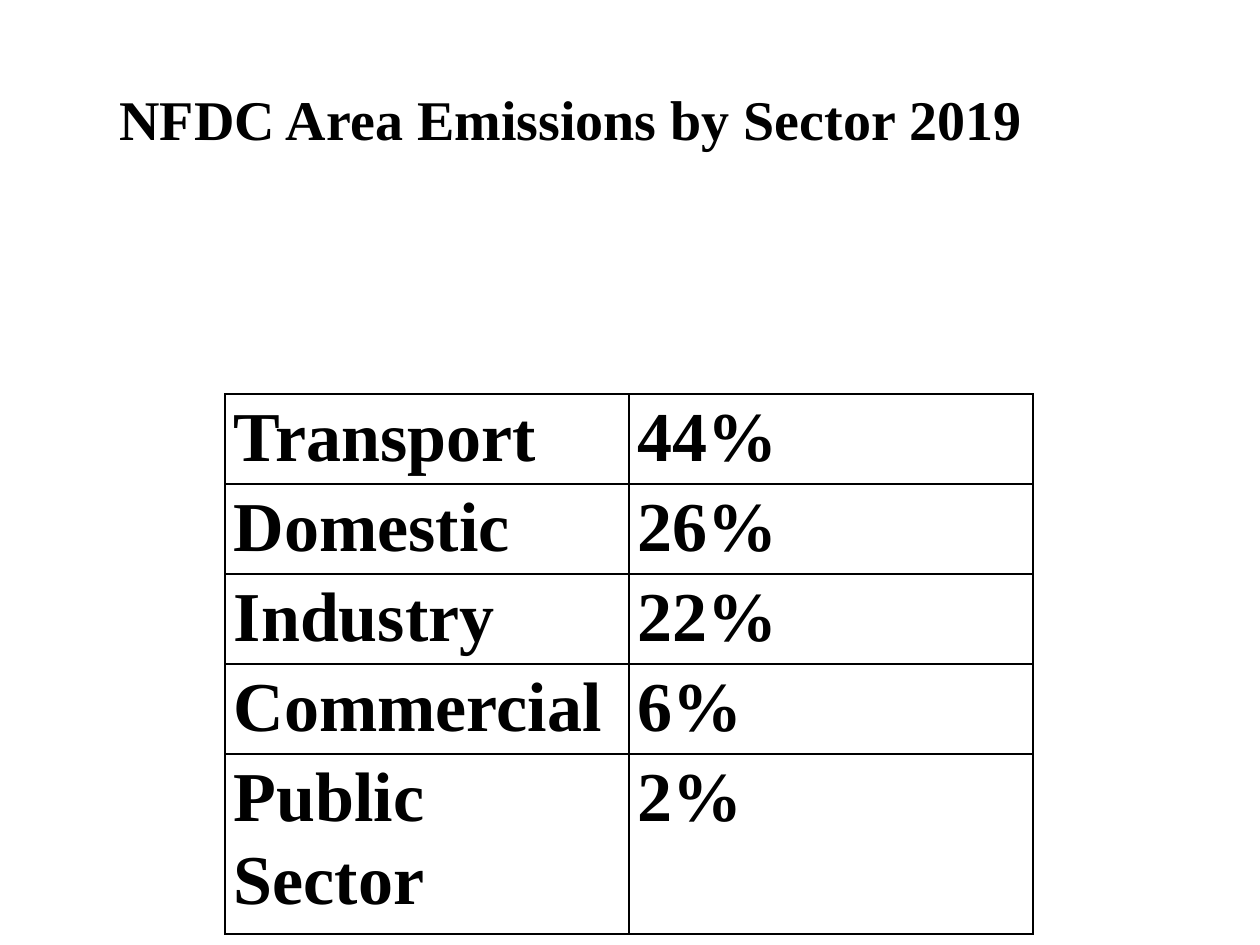
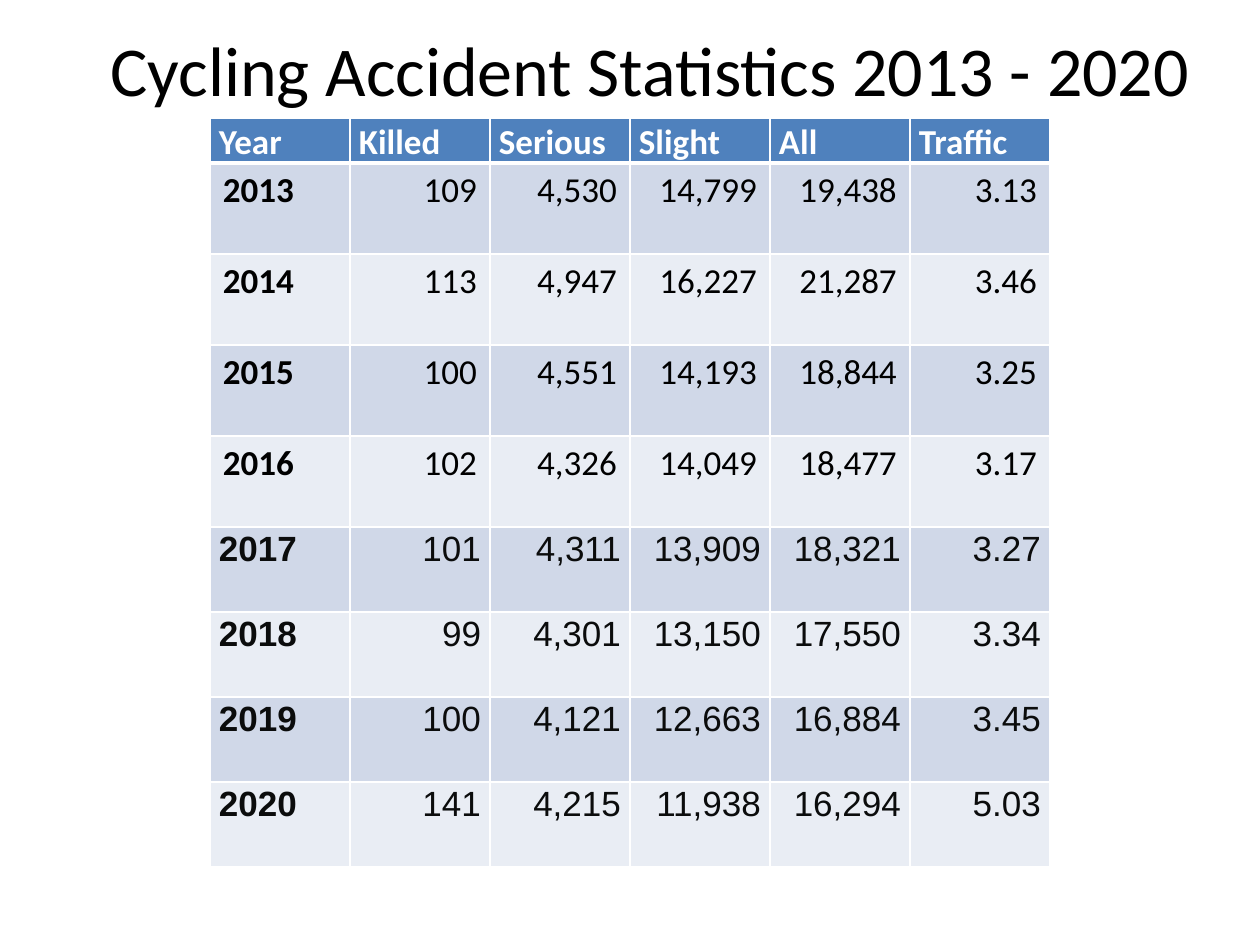
from dataclasses import dataclass

from lxml import etree
from pptx import Presentation
from pptx import util as u
from pptx.dml.color import RGBColor
from pptx.enum import text
from pptx.oxml import ns

PX = u.Inches(1) / 126
TITLE_ONLY = 5

BLACK = RGBColor(0x00, 0x00, 0x00)
INK = RGBColor(0x0B, 0x0C, 0x0C)
WHITE = RGBColor(0xFF, 0xFF, 0xFF)
HEADER_BLUE = RGBColor(0x4F, 0x81, 0xBD)
BANDS = (RGBColor(0xD0, 0xD8, 0xE8), RGBColor(0xE9, 0xED, 0xF4))

LEFT, RIGHT, CENTER = text.PP_ALIGN.LEFT, text.PP_ALIGN.RIGHT, text.PP_ALIGN.CENTER
TOP, MIDDLE = text.MSO_ANCHOR.TOP, text.MSO_ANCHOR.MIDDLE

SECTORS = [
    ("Transport", "44%"),
    ("Domestic", "26%"),
    ("Industry", "22%"),
    ("Commercial", "6%"),
    ("Public Sector", "2%"),
]
ACCIDENT_HEADER = ("Year", "Killed", "Serious", "Slight", "All", "Traffic")
ACCIDENTS = [
    ("2013", "109", "4,530", "14,799", "19,438", "3.13"),
    ("2014", "113", "4,947", "16,227", "21,287", "3.46"),
    ("2015", "100", "4,551", "14,193", "18,844", "3.25"),
    ("2016", "102", "4,326", "14,049", "18,477", "3.17"),
    ("2017", "101", "4,311", "13,909", "18,321", "3.27"),
    ("2018", "99", "4,301", "13,150", "17,550", "3.34"),
    ("2019", "100", "4,121", "12,663", "16,884", "3.45"),
    ("2020", "141", "4,215", "11,938", "16,294", "5.03"),
]


@dataclass
class CellStyle:
    font: str
    size: int
    color: RGBColor
    side_inset: int = 9
    top_inset: int = 0
    line_spacing: float = 1.07
    paragraph_gap: int = 0


SECTOR_STYLE = CellStyle("Times New Roman", 40, BLACK)
HEADER_STYLE = CellStyle("Calibri", 20, WHITE)
EARLY_STYLE = CellStyle("Calibri", 20, BLACK, side_inset=13, top_inset=6, line_spacing=1.0)
LATE_STYLE = CellStyle("Arial", 20, INK, paragraph_gap=15)


def px(length):
    return u.Emu(round(length * PX))


def add_run(paragraph, words, font, size, color, bold):
    run = paragraph.add_run()
    run.text = words
    run.font.name = font
    run.font.size = u.Pt(size)
    run.font.color.rgb = color
    run.font.bold = bold


def add_titled_slide(deck, words, box, font, size, bold, align, anchor):
    slide = deck.slides.add_slide(deck.slide_layouts[TITLE_ONLY])
    title = slide.shapes.title
    title.left, title.top, title.width, title.height = map(px, box)
    frame = title.text_frame
    frame.word_wrap = True
    frame.auto_size = text.MSO_AUTO_SIZE.SHAPE_TO_FIT_TEXT
    frame.vertical_anchor = anchor
    paragraph = frame.paragraphs[0]
    paragraph.alignment = align
    add_run(paragraph, words, font, size, BLACK, bold)
    return slide


def add_grid(slide, left, top, column_count, column_width, row_heights):
    """Add a table with equal columns and no built-in banding."""
    grid = slide.shapes.add_table(
        len(row_heights), column_count, px(left), px(top),
        px(column_count * column_width), px(sum(row_heights))).table
    grid.first_row = grid.horz_banding = False
    for column in grid.columns:
        column.width = px(column_width)
    for row, height in zip(grid.rows, row_heights):
        row.height = px(height)
    return grid


def set_borders(cell, color, top=1, bottom=1):
    properties = cell._tc.get_or_add_tcPr()
    for side, weight in (("L", 1), ("R", 1), ("T", top), ("B", bottom)):
        line = etree.SubElement(properties, ns.qn(f"a:ln{side}"), w=str(u.Pt(weight)))
        fill = etree.SubElement(line, ns.qn("a:solidFill"))
        etree.SubElement(fill, ns.qn("a:srgbClr"), val=str(color))


def write_cell(cell, words, style, bold, align=LEFT):
    cell.margin_left = cell.margin_right = px(style.side_inset)
    cell.margin_top = cell.margin_bottom = px(style.top_inset)
    paragraph = cell.text_frame.paragraphs[0]
    paragraph.alignment = align
    paragraph.line_spacing = style.line_spacing
    paragraph.space_before = paragraph.space_after = u.Pt(style.paragraph_gap)
    add_run(paragraph, words, style.font, style.size, style.color, bold)


def add_sector_table(slide):
    grid = add_grid(slide, 225, 394, 2, 404, [90] * 4 + [180])
    for row, sector in enumerate(SECTORS):
        for column, words in enumerate(sector):
            cell = grid.cell(row, column)
            set_borders(cell, BLACK)
            cell.fill.background()
            write_cell(cell, words, SECTOR_STYLE, bold=True)


def add_accident_table(slide):
    grid = add_grid(slide, 210, 118, 6, 140, [45] + [91] * 4 + [85] * 4)
    for column, words in enumerate(ACCIDENT_HEADER):
        cell = grid.cell(0, column)
        set_borders(cell, WHITE, bottom=3)
        cell.fill.solid()
        cell.fill.fore_color.rgb = HEADER_BLUE
        write_cell(cell, words, HEADER_STYLE, bold=True)
    for row, figures in enumerate(ACCIDENTS, start=1):
        style = EARLY_STYLE if row <= 4 else LATE_STYLE
        for column, words in enumerate(figures):
            is_year = column == 0
            cell = grid.cell(row, column)
            set_borders(cell, WHITE, top=3 if row == 1 else 1)
            cell.fill.solid()
            cell.fill.fore_color.rgb = BANDS[(row - 1) % 2]
            write_cell(cell, words, style, is_year, LEFT if is_year else RIGHT)


def main():
    deck = Presentation()
    deck.slide_width, deck.slide_height = px(1260), px(945)

    emissions = add_titled_slide(
        deck, "NFDC Area Emissions by Sector 2019", (0, 78, 1142, 81),
        "Times New Roman", 32, True, CENTER, MIDDLE)
    add_sector_table(emissions)

    cycling = add_titled_slide(
        deck, "Cycling Accident Statistics 2013 - 2020", (98, 20, 1113, 97),
        "Calibri", 40, False, LEFT, TOP)
    add_accident_table(cycling)

    deck.save("out.pptx")


if __name__ == "__main__":
    main()
